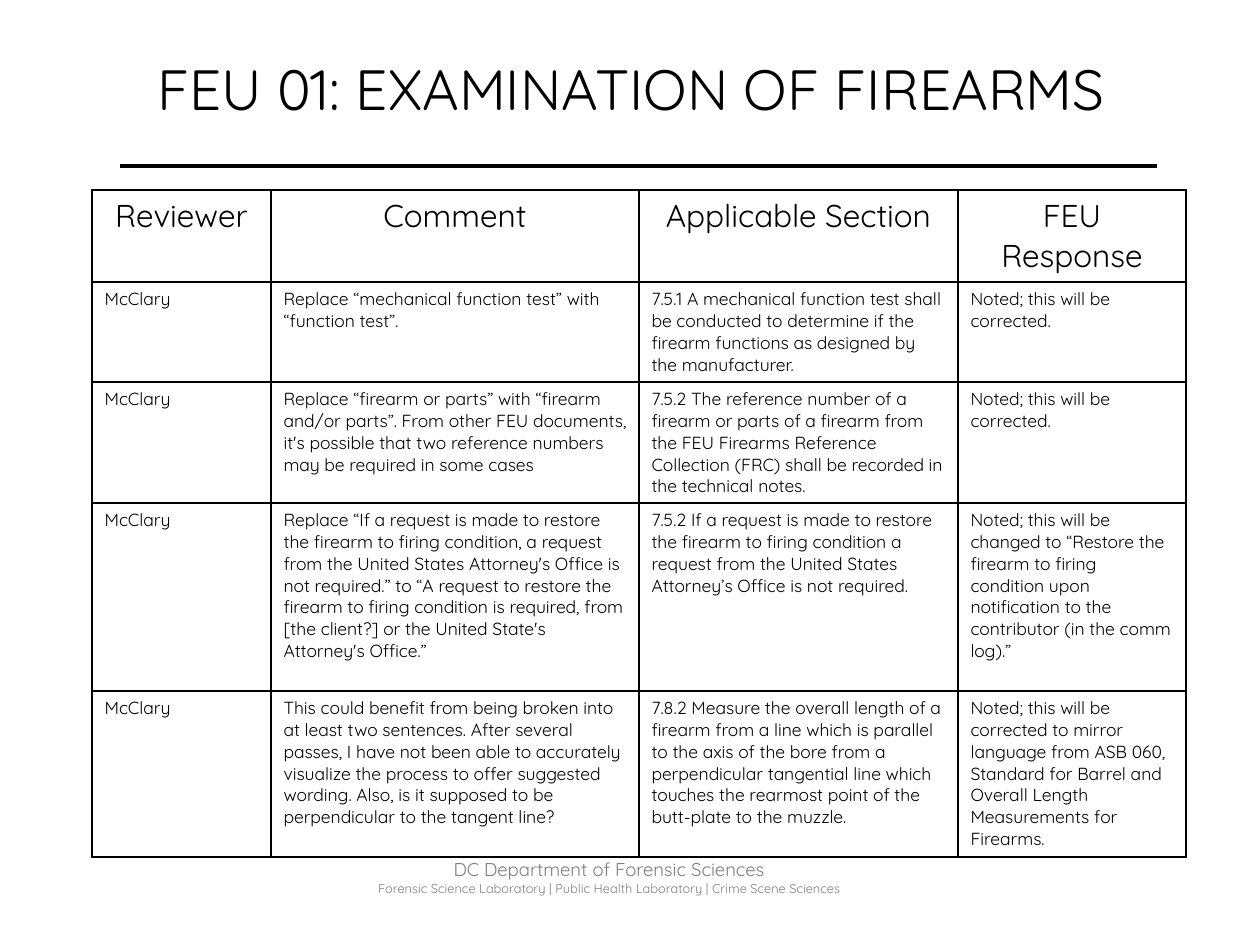
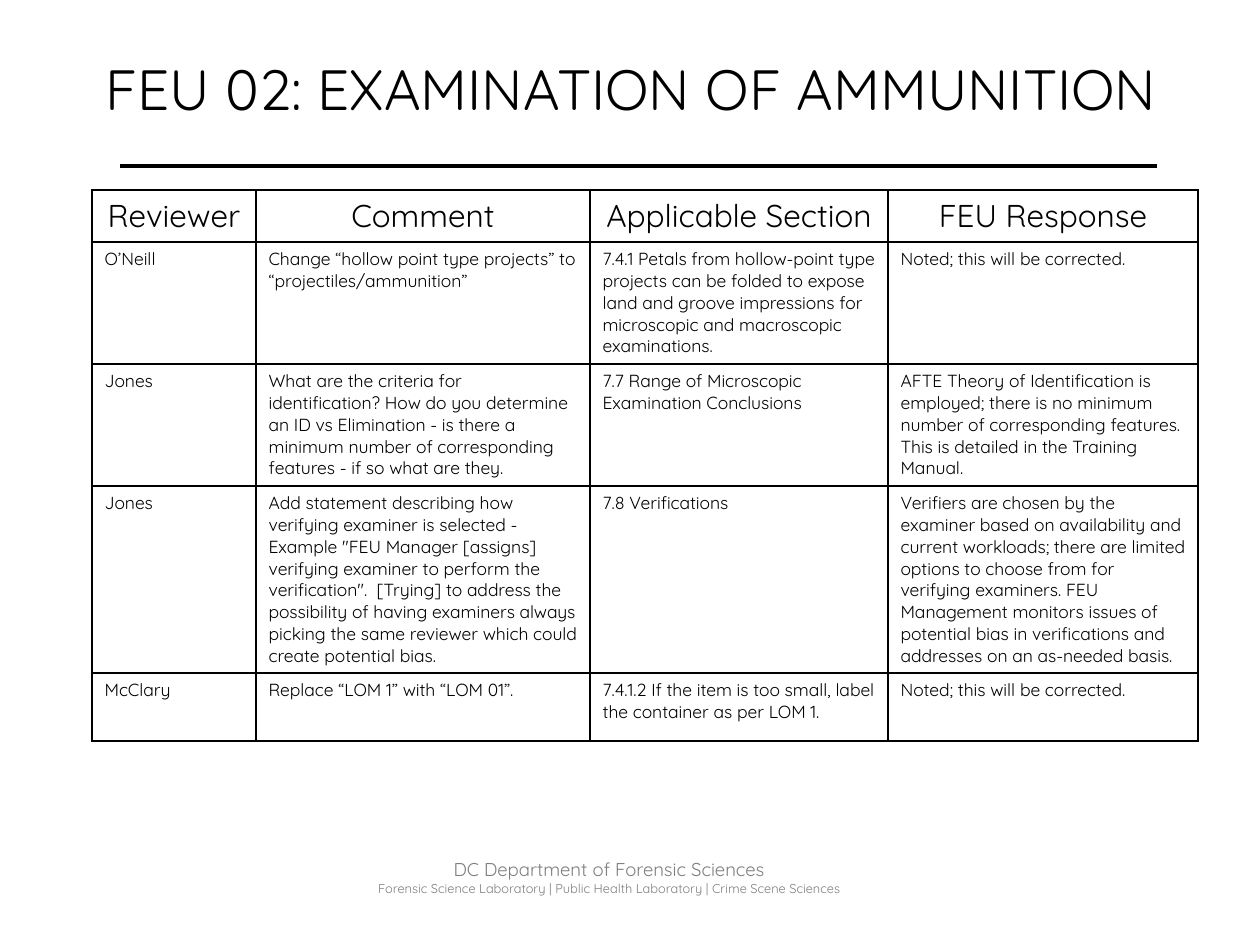
from lxml import etree
from pptx import Presentation
from pptx.dml.color import RGBColor
from pptx.enum.shapes import MSO_CONNECTOR as CONN
from pptx.enum.text import MSO_ANCHOR as ANCHOR, MSO_AUTO_SIZE as FIT, PP_ALIGN as ALIGN
from pptx.oxml.ns import qn
from pptx.util import Emu, Pt

BLACK = RGBColor(0x00, 0x00, 0x00)
WHITE = RGBColor(0xFF, 0xFF, 0xFF)
GREY = RGBColor(0x7F, 0x7F, 0x7F)
FONT = "Quicksand"
TITLE_ONLY = 5
SCALE = 914400 / 126  # EMU per px

HEADERS = ["Reviewer", "Comment", "Applicable Section", "FEU Response"]
CORRECTED = "Noted; this will be corrected."
FOOTER = [
    ("DC Department of Forensic Sciences", 10.6),
    ("Forensic Science Laboratory | Public Health Laboratory | Crime Scene Sciences", 7.3),
]

# Each review: title, column widths, row heights, comments
FIREARMS = dict(
    title="FEU 01: EXAMINATION OF FIREARMS",
    widths=[179, 368, 319, 228],
    heights=[92, 100, 121, 188, 166],
    comments=[
        ("McClary",
         "Replace “mechanical function test” with “function test”.",
         "7.5.1 A mechanical function test shall be conducted to determine if the "
         "firearm functions as designed by the manufacturer.",
         CORRECTED),
        ("McClary",
         "Replace “firearm or parts” with “firearm and/or parts”. From other FEU "
         "documents, it's possible that two reference numbers may be required in "
         "some cases",
         "7.5.2 The reference number of a firearm or parts of a firearm from the FEU "
         "Firearms Reference Collection (FRC) shall be recorded in the technical notes.",
         CORRECTED),
        ("McClary",
         "Replace “If a request is made to restore the firearm to firing condition, a "
         "request from the United States Attorney's Office is not required.” to “A "
         "request to restore the firearm to firing condition is required, from [the "
         "client?] or the United State's Attorney's Office.”",
         "7.5.2 If a request is made to restore the firearm to firing condition a "
         "request from the United States Attorney’s Office is not required.",
         "Noted; this will be changed to “Restore the firearm to firing condition upon "
         "notification to the contributor (in the comm log).”"),
        ("McClary",
         "This could benefit from being broken into at least two sentences. After "
         "several passes, I have not been able to accurately visualize the process to "
         "offer suggested wording. Also, is it supposed to be perpendicular to the "
         "tangent line?",
         "7.8.2 Measure the overall length of a firearm from a line which is parallel "
         "to the axis of the bore from a perpendicular tangential line which touches "
         "the rearmost point of the butt-plate to the muzzle.",
         "Noted; this will be corrected to mirror language from ASB 060, Standard for "
         "Barrel and Overall Length Measurements for Firearms."),
    ],
)
AMMUNITION = dict(
    title="FEU 02: EXAMINATION OF AMMUNITION",
    widths=[164, 334, 298, 310],
    heights=[52, 122, 122, 187, 68],
    comments=[
        ("O’Neill",
         "Change “hollow point type projects” to “projectiles/ammunition”",
         "7.4.1 Petals from hollow-point type projects can be folded to expose land and "
         "groove impressions for microscopic and macroscopic examinations.",
         CORRECTED),
        ("Jones",
         "What are the criteria for identification? How do you determine an ID vs "
         "Elimination - is there a minimum number of corresponding features - if so "
         "what are they.",
         "7.7 Range of Microscopic Examination Conclusions",
         "AFTE Theory of Identification is employed; there is no minimum number of "
         "corresponding features. This is detailed in the Training Manual."),
        ("Jones",
         "Add statement describing how verifying examiner is selected - Example \"FEU "
         "Manager [assigns] verifying examiner to perform the verification\".  [Trying] "
         "to address the possibility of having examiners always picking the same "
         "reviewer which could create potential bias.",
         "7.8 Verifications",
         "Verifiers are chosen by the examiner based on availability and current "
         "workloads; there are limited options to choose from for verifying examiners. "
         "FEU Management monitors issues of potential bias in verifications and "
         "addresses on an as-needed basis."),
        ("McClary",
         "Replace “LOM 1” with “LOM 01”.",
         "7.4.1.2 If the item is too small, label the container as per LOM 1.",
         CORRECTED),
    ],
)


def px(n):
    return Emu(round(n * SCALE))


def write(p, text, size=10, color=BLACK, align=ALIGN.LEFT):
    p.alignment = align
    r = p.add_run()
    r.text = text
    r.font.name = FONT
    r.font.size = Pt(size)
    r.font.color.rgb = color


class Deck:
    def __init__(self):
        self.prs = Presentation()
        self.prs.slide_width, self.prs.slide_height = px(1260), px(945)
        self.s = None

    def slide(self, title):
        self.s = self.prs.slides.add_slide(self.prs.slide_layouts[TITLE_ONLY])
        self.footer()
        self.rule(120, 1157, 166)
        self.title(title)

    def title(self, text):
        sp = self.s.shapes.title
        sp.left, sp.top, sp.width, sp.height = map(px, (64, 9, 1134, 158))
        tf = sp.text_frame
        tf.auto_size = FIT.NONE
        tf.vertical_anchor = ANCHOR.MIDDLE
        write(tf.paragraphs[0], text, size=32.4, align=ALIGN.CENTER)

    def rule(self, x1, x2, y):
        line = self.s.shapes.add_connector(CONN.STRAIGHT, px(x1), px(y), px(x2), px(y))
        line.line.color.rgb = BLACK
        line.line.width = Pt(2)
        etree.SubElement(line._element.spPr, qn("a:effectLst"))

    def footer(self):
        tf = self.s.shapes.add_textbox(*map(px, (252, 853, 714, 48))).text_frame
        tf.word_wrap = True
        tf.margin_left = tf.margin_right = px(9)
        tf.margin_top = tf.margin_bottom = px(5)
        for i, (text, size) in enumerate(FOOTER):
            p = tf.add_paragraph() if i else tf.paragraphs[0]
            write(p, text, size=size, color=GREY, align=ALIGN.CENTER)

    def table(self, rows, widths, heights):
        frame = self.s.shapes.add_table(len(rows), len(widths), px(92), px(190),
                                        px(sum(widths)), px(sum(heights)))
        tbl = frame.table
        tbl.first_row = tbl.horz_banding = False
        for col, width in zip(tbl.columns, widths):
            col.width = px(width)
        for row, height in zip(tbl.rows, heights):
            row.height = px(height)
        for i, texts in enumerate(rows):
            look = {} if i else dict(size=18, align=ALIGN.CENTER)
            for j, text in enumerate(texts):
                cell = tbl.cell(i, j)
                self.borders(cell)
                cell.fill.solid()
                cell.fill.fore_color.rgb = WHITE
                write(cell.text_frame.paragraphs[0], text, **look)

    def borders(self, cell):
        tc_pr = cell._tc.get_or_add_tcPr()
        for side in "LRTB":
            ln = etree.SubElement(tc_pr, qn(f"a:ln{side}"), w=str(Pt(1)))
            fill = etree.SubElement(ln, qn("a:solidFill"))
            etree.SubElement(fill, qn("a:srgbClr"), val=str(BLACK))


def main():
    deck = Deck()
    for review in (FIREARMS, AMMUNITION):
        deck.slide(review["title"])
        deck.table([HEADERS, *review["comments"]], review["widths"], review["heights"])
    deck.prs.save("out.pptx")


if __name__ == "__main__":
    main()
